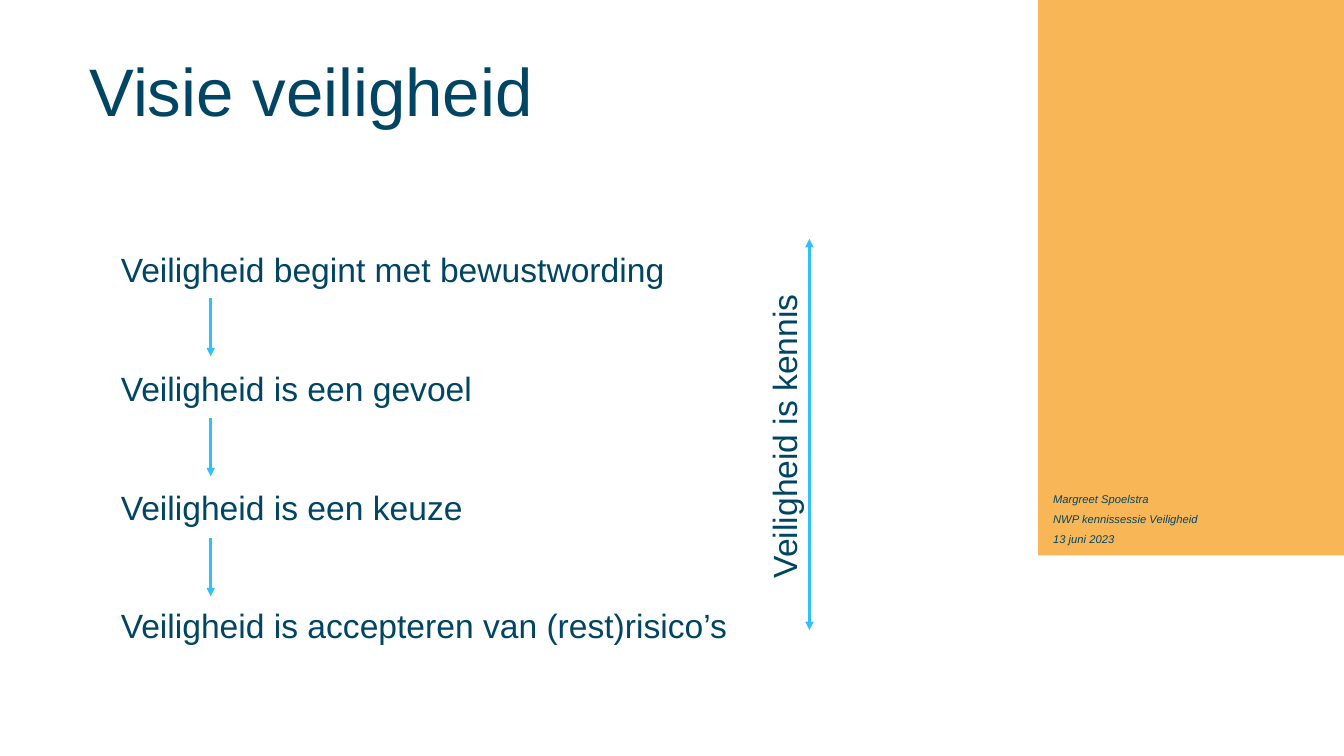
from dataclasses import dataclass

from lxml import etree
from pptx import Presentation, util as u
from pptx.dml.color import RGBColor
from pptx.enum import shapes, text
from pptx.oxml.ns import qn


@dataclass(frozen=True)
class Theme:
    font: str = "Arial"
    ink: str = "004563"
    panel: str = "F9B657"
    arrow: str = "31C0FE"
    title: int = 48
    body: int = 24
    small: int = 8
    line: int = 2


class Deck:
    COLUMNS, ROWS = 40, 30

    def __init__(self, theme):
        self.theme = theme
        self.prs = Presentation()
        self.prs.slide_width = u.Inches(13.333)
        self.prs.slide_height = u.Inches(7.5)
        self.s = None

    def add_slide(self):
        self.s = self.prs.slides.add_slide(self.prs.slide_layouts[6])

    def col(self, n):
        return round(self.prs.slide_width * n / self.COLUMNS)

    def row(self, n):
        return round(self.prs.slide_height * n / self.ROWS)

    def box(self, x, y, w, h):
        return self.col(x), self.row(y), self.col(w), self.row(h)

    def panel(self, x, y, w, h):
        sp = self.s.shapes.add_shape(shapes.MSO_SHAPE.RECTANGLE, *self.box(x, y, w, h))
        sp.shadow.inherit = False
        sp.fill.solid()
        sp.fill.fore_color.rgb = RGBColor.from_string(self.theme.panel)
        sp.line.fill.background()

    def text(self, content, x, y, w, h, size, italic=False, spacing=1.0, gap=0,
             anchor=text.MSO_ANCHOR.TOP, rotation=0, wrap=True):
        sp = self.s.shapes.add_textbox(*self.box(x, y, w, h))
        sp.rotation = rotation
        tf = sp.text_frame
        tf.word_wrap = wrap
        tf.vertical_anchor = anchor
        for i, line in enumerate(content.split("\n")):
            p = tf.add_paragraph() if i else tf.paragraphs[0]
            p.line_spacing = spacing
            p.space_before = u.Pt(gap if i else 0)
            r = p.add_run()
            r.text = line
            r.font.name = self.theme.font
            r.font.size = u.Pt(size)
            r.font.italic = italic
            r.font.color.rgb = RGBColor.from_string(self.theme.ink)

    def arrow(self, x, y, length, ends=("tailEnd",)):
        c = self.s.shapes.add_connector(
            shapes.MSO_CONNECTOR.STRAIGHT,
            self.col(x), self.row(y), self.col(x), self.row(y + length))
        c.line.color.rgb = RGBColor.from_string(self.theme.arrow)
        c.line.width = u.Pt(self.theme.line)
        ln = c.line._get_or_add_ln()
        for end in ends:
            etree.SubElement(ln, qn(f"a:{end}"), type="triangle")
        etree.SubElement(c._element.spPr, qn("a:effectLst"))

    def save(self):
        self.prs.save("out.pptx")


def main():
    theme = Theme()
    deck = Deck(theme)
    deck.add_slide()

    deck.panel(30.9, 0, 9.1, 22.04)
    deck.text("Visie veiligheid", 2.37, 1.72, 27.18, 3.64, theme.title,
              anchor=text.MSO_ANCHOR.BOTTOM)

    steps = ["Veiligheid begint met bewustwording",
             "Veiligheid is een gevoel",
             "Veiligheid is een keuze",
             "Veiligheid is accepteren van (rest)risico’s"]
    deck.text("\n".join(steps), 3.3, 9.54, 19.2, 16.2, theme.body, spacing=1.1, gap=53)
    for i in range(len(steps) - 1):
        deck.arrow(6.27, 11.84 + 4.76 * i, 2.3)

    deck.text("Veiligheid is kennis", 18.75, 16.24, 9.15, 2, theme.body,
              rotation=270, wrap=False)
    deck.arrow(24.09, 9.48, 15.52, ends=("headEnd", "tailEnd"))

    deck.text("Margreet Spoelstra\nNWP kennissessie Veiligheid\n13 juni 2023",
              31.05, 19.08, 5.7, 2.72, theme.small, italic=True, spacing=1.5)
    deck.save()


if __name__ == "__main__":
    main()
